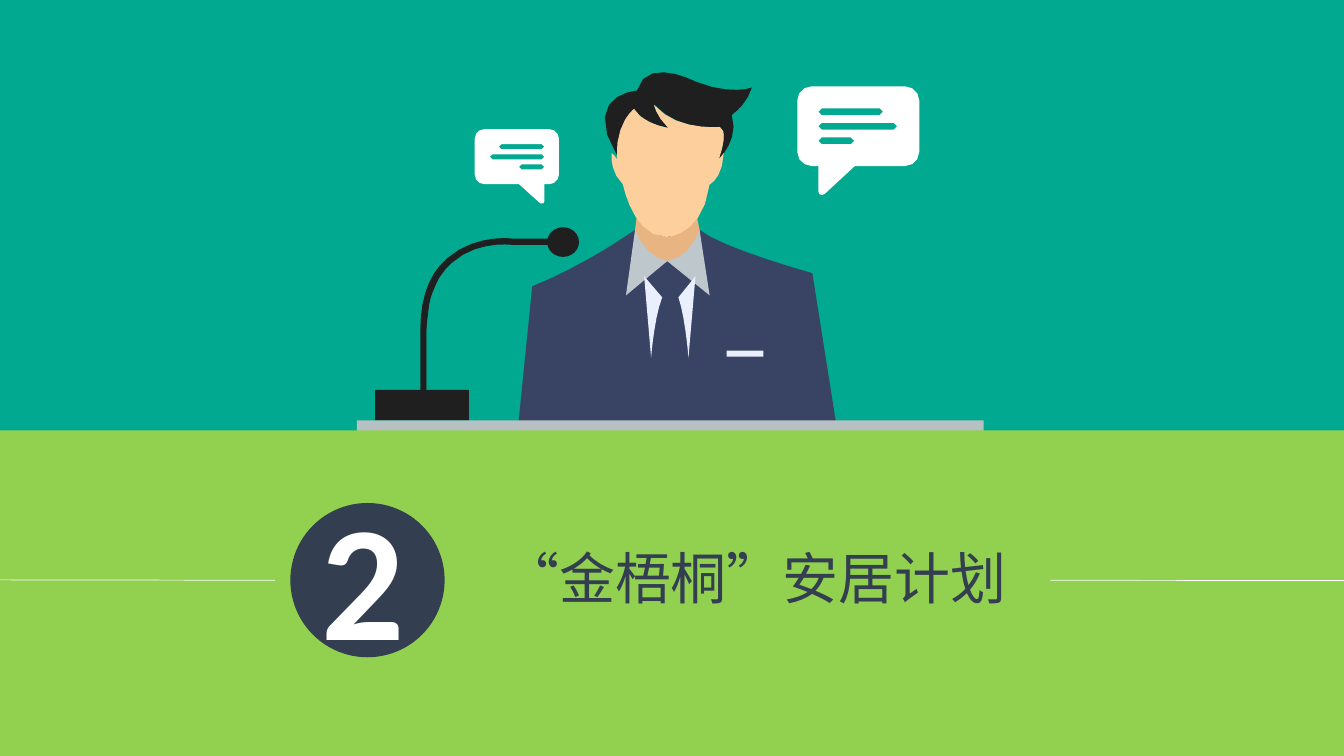
import math
from dataclasses import dataclass

import pptx
import pptx.dml.color
import pptx.enum.shapes
import pptx.enum.text
import pptx.oxml
import pptx.oxml.ns
import pptx.util
from lxml import etree

Pt = pptx.util.Pt
Kind = pptx.enum.shapes.MSO_SHAPE


@dataclass(frozen=True)
class Theme:
    backdrop: str = "00A98F"
    ground: str = "92D050"
    ink: str = "201F20"
    suit: str = "394363"
    neck: str = "E8B582"
    skin: str = "FDCF9D"
    collar: str = "BDC7CC"
    shirt: str = "E9EFFC"
    desk: str = "B7C0C2"
    navy: str = "333F50"
    white: str = "FFFFFF"
    title_font: str = "Noto Sans CJK SC"
    number_font: str = "Calibri"
    title_size: float = 40
    number_size: float = 117.3


THEME = Theme()

# Outlines in points: 2 values are a straight line, 4 a curve whose first
# control is its start, 6 a full cubic curve.
MIC_CABLE = [(402.5, 172.8), (366.5, 172.8), (303.1, 164.9, 303.1, 236.2), (303.1, 287.3)]
HAIR = [(537.1, 62.6), (522, 68.4, 496.8, 58.3), (461.5, 39.6, 455, 64.8),
        (413.3, 67, 442.1, 113.8), (439.2, 87.8, 452.9, 77.8), (459.4, 88.6, 477.4, 91.4),
        (468, 82.1, 468, 74.9), (482.4, 93.6, 514.1, 90.7), (521.3, 92.9, 513.4, 113.8),
        (528.5, 99.4, 522.7, 82.1), (533.5, 74.9, 537.1, 62.6)]
JACKET = [(453.6, 164.2), (418.3, 189.4, 380.2, 204.5), (370.1, 304.6), (597.6, 304.6),
          (580.3, 195.1), (515.5, 177.1, 499.7, 164.2)]
NECK = [(477.4, 169.2), (467.3, 169.2, 461.5, 161.3, 455, 153.4), (453.6, 164.2),
        (455, 195.1), (476.6, 186.5), (500.4, 195.1), (499.7, 164.2), (497.5, 153.4),
        (488.9, 167, 477.4, 169.2)]
FACE = [(513.4, 113.8), (521.3, 92.9, 514.1, 90.7), (482.4, 93.6, 467.3, 74.9),
        (468, 82.1, 477.4, 91.4), (458.6, 88.6, 452.9, 77.8), (439.2, 87.8, 440.6, 113.8),
        (439.2, 112.3, 439.2, 110.2, 437, 109.4), (434.9, 121.7, 445, 131.8),
        (452.2, 169.2, 475.9, 169.2), (501.8, 169.2, 506.9, 131.8),
        (516.2, 127.4, 517, 109.4), (514.8, 112.3, 513.4, 113.8)]
COLLAR_LEFT = [(453.6, 164.2), (460.1, 183.6, 476.6, 186.5), (447.1, 211)]
COLLAR_RIGHT = [(499.7, 164.2), (493.9, 183.6, 476.6, 186.5), (506.9, 211)]
SHIRT_RIGHT = [(496.8, 197.3), (491.8, 255.6), (489.6, 226.8, 484.6, 212.4)]
SHIRT_LEFT = [(460.1, 197.3), (465.1, 255.6), (467.3, 226.8, 473, 212.4)]
MIC_ARM = [(304.6, 287.3), (300.2, 287.3), (300.2, 236.2),
           (300.2, 212.4, 306.7, 195.1, 319.7, 184.3),
           (338.4, 167.8, 364.3, 169.9, 366.5, 170.6), (402.5, 170.6), (402.5, 175),
           (366.5, 175), (365.8, 175, 340.6, 171.4, 322.6, 187.9),
           (311, 198, 304.6, 214.6, 304.6, 236.2)]


def rgb(color):
    return pptx.dml.color.RGBColor.from_string(color)


def paint(shape, color):
    shape.shadow.inherit = False
    shape.fill.solid()
    shape.fill.fore_color.rgb = rgb(color)
    shape.line.fill.background()


def trace(outline):
    """Turn lines and curves into points, with more steps on longer curves."""
    points = [outline[0]]
    for segment in outline[1:]:
        start = points[-1]
        if len(segment) == 2:
            points.append(segment)
            continue
        controls = segment if len(segment) == 6 else (*start, *segment)
        knots = [start, controls[:2], controls[2:4], controls[4:]]
        steps = min(8, max(2, round(math.sqrt(math.dist(start, knots[3])))))
        for step in range(1, steps + 1):
            t = step / steps
            weights = [math.comb(3, k) * t**k * (1 - t)**(3 - k) for k in range(4)]
            points.append(tuple(sum(w * knot[axis] for w, knot in zip(weights, knots))
                                for axis in (0, 1)))
    return points


def rounded_box(left, top, width, height, radius, tail=(), steps=3):
    """Points of a rounded box, with an optional tail on its lower edge."""
    right, bottom = left + width - radius, top + height - radius
    left, top = left + radius, top + radius
    points = []
    corners = [(left, top), (right, top), (right, bottom), (left, bottom)]
    for corner, (x, y) in enumerate(corners):
        if corner == 3:
            points += tail
        for step in range(steps + 1):
            angle = math.pi * (1 + (corner + step / steps) / 2)
            points.append((x + radius * math.cos(angle), y + radius * math.sin(angle)))
    return points


def add_freeform(shapes, contours, close=True):
    grid = [[(x * 100, y * 100) for x, y in contour] for contour in contours]
    builder = shapes.build_freeform(*grid[0][0], scale=Pt(1) / 100)
    builder.add_line_segments(grid[0][1:], close=close)
    for start, *rest in grid[1:]:
        builder.move_to(*start)
        builder.add_line_segments(rest, close=close)
    return builder.convert_to_shape()


def add_outline(shapes, outline, color):
    paint(add_freeform(shapes, [trace(outline)]), color)


def add_cable(shapes, outline, color, width):
    cable = add_freeform(shapes, [trace(outline)], close=False)
    cable.shadow.inherit = False
    cable.fill.background()
    cable.line.color.rgb = rgb(color)
    cable.line.width = Pt(width)


def add_bubble(shapes, box, radius, tail, bars, bar_height):
    holes = [rounded_box(*bar, bar_height, bar_height / 2, steps=1) for bar in bars]
    paint(add_freeform(shapes, [rounded_box(*box, radius, tail), *holes]), THEME.white)


def add_block(shapes, kind, box, color):
    paint(shapes.add_shape(kind, *map(Pt, box)), color)


def add_rule(shapes, start, end):
    rule = shapes.add_connector(pptx.enum.shapes.MSO_CONNECTOR.STRAIGHT,
                                *map(Pt, (*start, *end)))
    rule.line.color.rgb = rgb(THEME.white)
    rule.line.width = Pt(0.5)
    etree.SubElement(rule._element.spPr, pptx.oxml.ns.qn("a:effectLst"))


def add_label(shapes, text, box, font, size, color, bold=None, wrap=True, align=None):
    label = shapes.add_textbox(*map(Pt, box))
    frame = label.text_frame
    frame.word_wrap = wrap
    frame.auto_size = pptx.enum.text.MSO_AUTO_SIZE.SHAPE_TO_FIT_TEXT
    paragraph = frame.paragraphs[0]
    paragraph.text = text
    paragraph.alignment = align
    paragraph.font.name = font
    paragraph.font.size = Pt(size)
    paragraph.font.bold = bold
    paragraph.font.color.rgb = rgb(color)
    # East Asian text takes its font from a separate element
    latin = paragraph._p.find(".//" + pptx.oxml.ns.qn("a:latin"))
    east_asian = etree.Element(pptx.oxml.ns.qn("a:ea"), typeface=font)
    latin.addnext(east_asian)


def add_speaker(shapes):
    add_cable(shapes, MIC_CABLE, THEME.ink, 2.38)
    for outline, color in [(HAIR, THEME.ink), (JACKET, THEME.suit), (NECK, THEME.neck),
                           (FACE, THEME.skin), (COLLAR_LEFT, THEME.collar),
                           (COLLAR_RIGHT, THEME.collar), (SHIRT_RIGHT, THEME.shirt),
                           (SHIRT_LEFT, THEME.shirt)]:
        add_outline(shapes, outline, color)
    # Pocket, desk and microphone
    add_block(shapes, Kind.RECTANGLE, (519.1, 250.4, 26.2, 4.4), THEME.shirt)
    add_block(shapes, Kind.RECTANGLE, (254.9, 300.2, 447.8, 13), THEME.desk)
    add_block(shapes, Kind.RECTANGLE, (268, 278.6, 67, 21.6), THEME.ink)
    add_block(shapes, Kind.OVAL, (390.8, 162.3, 22.8, 21.2), THEME.ink)
    add_outline(shapes, MIC_ARM, THEME.ink)
    # Speech bubbles
    add_bubble(shapes, (569.5, 61.7, 87.1, 56.9), 10.1,
               [(610.6, 118.6), (589, 138.6), (587, 139.3), (585.2, 138.6),
                (584.6, 136.8), (584.6, 118.6)],
               [(584.6, 77.4, 46.1), (584.6, 87.8, 56.2), (584.6, 98.2, 25.6)], 4.8)
    add_bubble(shapes, (339.1, 92.2, 60.2, 39.4), 7,
               [(388.8, 131.6), (388.8, 144), (388.1, 145.3), (386, 145.3), (370.8, 131.6)],
               [(356.4, 103, 32.4), (349.9, 110.2, 38.9), (370.8, 117.4, 18)], 3.6)


def main():
    deck = pptx.Presentation()
    deck.slide_width, deck.slide_height = Pt(960), Pt(540)
    slide = deck.slides.add_slide(deck.slide_layouts[6])
    slide.background.fill.solid()
    slide.background.fill.fore_color.rgb = rgb(THEME.backdrop)
    shapes = slide.shapes

    # Illustration
    add_speaker(shapes.add_group_shape().shapes)

    # Title band
    add_block(shapes, Kind.RECTANGLE, (0, 307.4, 960, 232.6), THEME.ground)
    add_rule(shapes, (0, 414.2), (196.6, 414.5))
    add_rule(shapes, (750.2, 414.5), (961.9, 414.7))
    add_label(shapes, "“金梧桐”安居计划", (321.8, 384.5, 434.9, 55.4), THEME.title_font,
              THEME.title_size, THEME.navy, align=pptx.enum.text.PP_ALIGN.CENTER)

    # Section number
    badge = shapes.add_group_shape().shapes
    add_block(badge, Kind.OVAL, (207.4, 359.3, 110.2, 110.2), THEME.navy)
    add_label(badge, "2", (222.5, 336.6, 85, 149.8), THEME.number_font,
              THEME.number_size, THEME.white, bold=True, wrap=False)

    deck.save("out.pptx")


if __name__ == "__main__":
    main()
